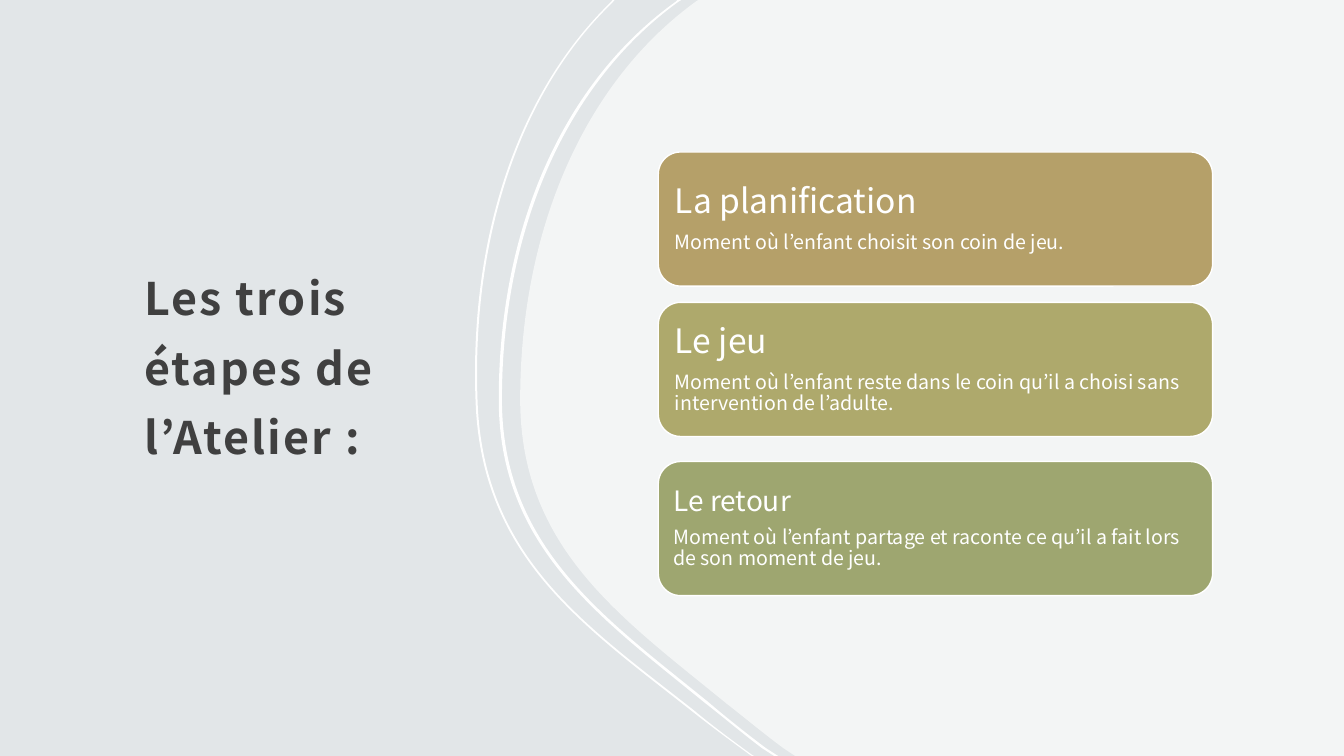
import pptx
import pptx.dml.color
import pptx.enum.shapes
import pptx.enum.text
import pptx.oxml
import pptx.oxml.ns
import pptx.util

Cm, Pt = pptx.util.Cm, pptx.util.Pt

# Content
FONT = "Noto Sans CJK JP"
BACKGROUND, WHITE, DARK = "E2E6E8", "FFFFFF", "404040"
TITLE = "Les trois étapes de l’Atelier :"

# heading, description, colour, top in cm, heading size, inset in cm
STAGES = [
    ("La planification", "Moment où l’enfant choisit son coin de jeu.",
     "B5A069", 3.83, 24, 0.25),
    ("Le jeu", "Moment où l’enfant reste dans le coin qu’il a choisi sans "
     "intervention de l’adulte.", "AEA96C", 7.62, 24, 0.25),
    ("Le retour", "Moment où l’enfant partage et raconte ce qu’il a fait lors "
     "de son moment de jeu.", "9EA670", 11.63, 20, 0.21),
]
STAGE_LEFT, STAGE_WIDTH, STAGE_HEIGHT, TEXT_MARGIN = 16.59, 13.97, 3.38, 0.17

# Outlines in cm: pairs are straight steps, sextuples are Bézier steps
PANEL = [
    (33.87, 0), (17.6, 0), (17.55, 0.03),
    (14.71, 2.08, 13.11, 5.82, 13.11, 10.06),
    (13.11, 13.82, 15.67, 15.57, 18.31, 17.73),
    (18.8, 18.11, 19.25, 18.49, 19.74, 18.85),
    (20.04, 19.05), (33.87, 19.05),
]
THIN_BAND = [
    (15.49, 0), (15.44, 0), (15.37, 0.08),
    (13, 2.39, 11.81, 6.1, 11.99, 10.21),
    (12.17, 14.1, 14.78, 15.82, 17.45, 17.93),
    (17.93, 18.31, 18.42, 18.67, 18.9, 19.02),
    (18.95, 19.05), (19, 19.05), (18.95, 19.02),
    (18.47, 18.67, 17.98, 18.31, 17.5, 17.91),
    (14.83, 15.8, 12.22, 14.1, 12.04, 10.21),
    (11.86, 6.1, 13.06, 2.36, 15.42, 0.08),
]
WIDE_BAND = [
    (17.17, 0), (17.07, 0), (17.02, 0.05),
    (14.15, 2.11, 12.57, 5.82, 12.57, 10.06),
    (12.57, 13.79, 15.14, 15.57, 17.75, 17.7),
    (18.24, 18.08, 18.72, 18.49, 19.2, 18.85),
    (19.51, 19.05), (19.61, 19.05), (19.3, 18.85),
    (18.82, 18.49, 18.34, 18.11, 17.86, 17.7),
    (15.24, 15.57, 12.65, 13.79, 12.65, 10.06),
    (12.65, 5.82, 14.25, 2.11, 17.09, 0.05),
]


def paint(fill, colour, opacity=100):
    fill.solid()
    fill.fore_color.rgb = pptx.dml.color.RGBColor.from_string(colour)
    if opacity < 100:
        tint = fill.fore_color._xFill.find(pptx.oxml.ns.qn("a:srgbClr"))
        alpha = pptx.oxml.parse_xml(
            f'<a:alpha {pptx.oxml.ns.nsdecls("a")} val="{opacity * 1000}"/>')
        tint.append(alpha)


def bend(shape, steps):
    """Turn the straight segments of the Bézier steps into true curves."""
    segments = list(shape._element.iter(pptx.oxml.ns.qn("a:lnTo")))
    for segment, step in zip(segments, steps):
        if len(step) == 6:
            points = "".join(
                f'<a:pt x="{Cm(x) - shape.left}" y="{Cm(y) - shape.top}"/>'
                for x, y in zip(step[::2], step[1::2]))
            curve = pptx.oxml.parse_xml(
                f'<a:cubicBezTo {pptx.oxml.ns.nsdecls("a")}>{points}'
                '</a:cubicBezTo>')
            segment.getparent().replace(segment, curve)


def add_outline(shapes, outline, opacity=100):
    start, *corners = [(Cm(step[-2]), Cm(step[-1])) for step in outline]
    builder = shapes.build_freeform(*start)
    builder.add_line_segments(corners, close=True)
    shape = builder.convert_to_shape()
    bend(shape, outline[1:])
    shape.shadow.inherit = False
    paint(shape.fill, WHITE, opacity)
    shape.line.fill.background()


def add_text(shapes, place, inset, paragraphs, line_spacing, colour):
    """Write (text, size) paragraphs in a wrapped, vertically centred box."""
    box = shapes.add_textbox(*map(Cm, place))
    frame = box.text_frame
    frame.word_wrap = True
    frame.vertical_anchor = pptx.enum.text.MSO_ANCHOR.MIDDLE
    frame.margin_left = frame.margin_right = Cm(inset)
    frame.margin_top = frame.margin_bottom = Cm(inset)
    frame.text = "\n".join(text for text, size in paragraphs)
    for paragraph, (text, size) in zip(frame.paragraphs, paragraphs):
        paragraph.line_spacing = line_spacing
        font = paragraph.runs[0].font
        font.name, font.size = FONT, Pt(size)
        paint(font.fill, colour)
    return frame


presentation = pptx.Presentation()
presentation.slide_width, presentation.slide_height = Cm(33.87), Cm(19.05)
slide = presentation.slides.add_slide(presentation.slide_layouts[6])
paint(slide.background.fill, BACKGROUND)

# Title
title = add_text(slide.shapes, (3.31, 3.07, 8.38, 11.89), 0.32,
                 [(TITLE, 32)], 1.3, DARK)
title.margin_bottom = Cm(0.25)
title_run = title.paragraphs[0].runs[0]
title_run.font.bold = True
title_run.font._element.set("spc", "150")

# Curved panel and its two bands
curves = slide.shapes.add_group_shape().shapes
add_outline(curves, PANEL, opacity=60)
add_outline(curves, THIN_BAND)
add_outline(curves, WIDE_BAND)

# Stage cards
cards = slide.shapes.add_group_shape().shapes
for heading, description, colour, top, size, inset in STAGES:
    card = cards.add_shape(
        pptx.enum.shapes.MSO_SHAPE.ROUNDED_RECTANGLE,
        *map(Cm, (STAGE_LEFT, top, STAGE_WIDTH, STAGE_HEIGHT)))
    card.shadow.inherit = False
    paint(card.fill, colour)
    paint(card.line.fill, WHITE)
    card.line.width = Pt(1)
    place = (STAGE_LEFT + TEXT_MARGIN, top + TEXT_MARGIN,
             STAGE_WIDTH - 2 * TEXT_MARGIN, STAGE_HEIGHT - 2 * TEXT_MARGIN)
    stage = add_text(cards, place, inset,
                     [(heading, size), (description, 14)], 0.9, WHITE)
    stage.paragraphs[0].space_after = Pt(0.35 * size)

presentation.save("out.pptx")
